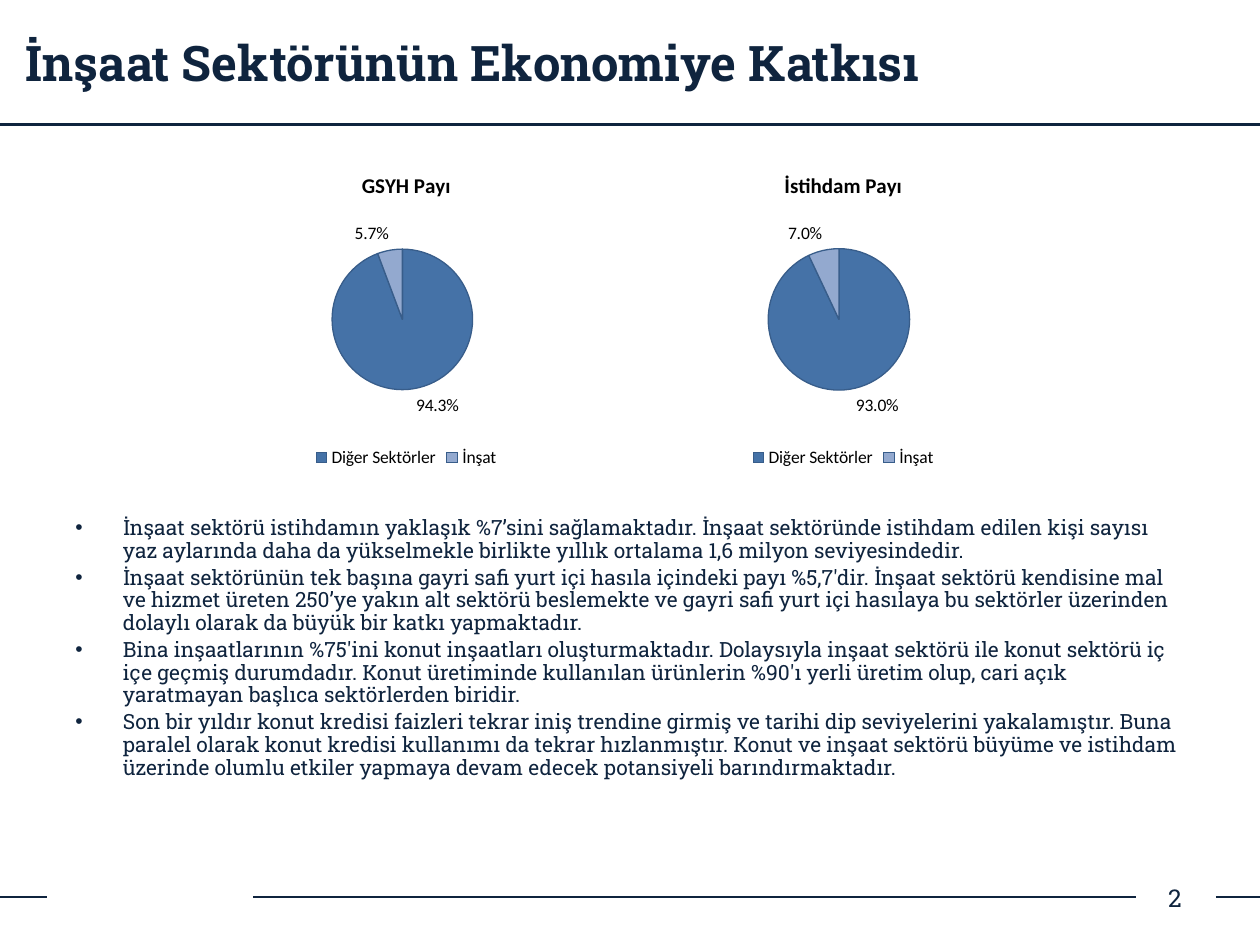
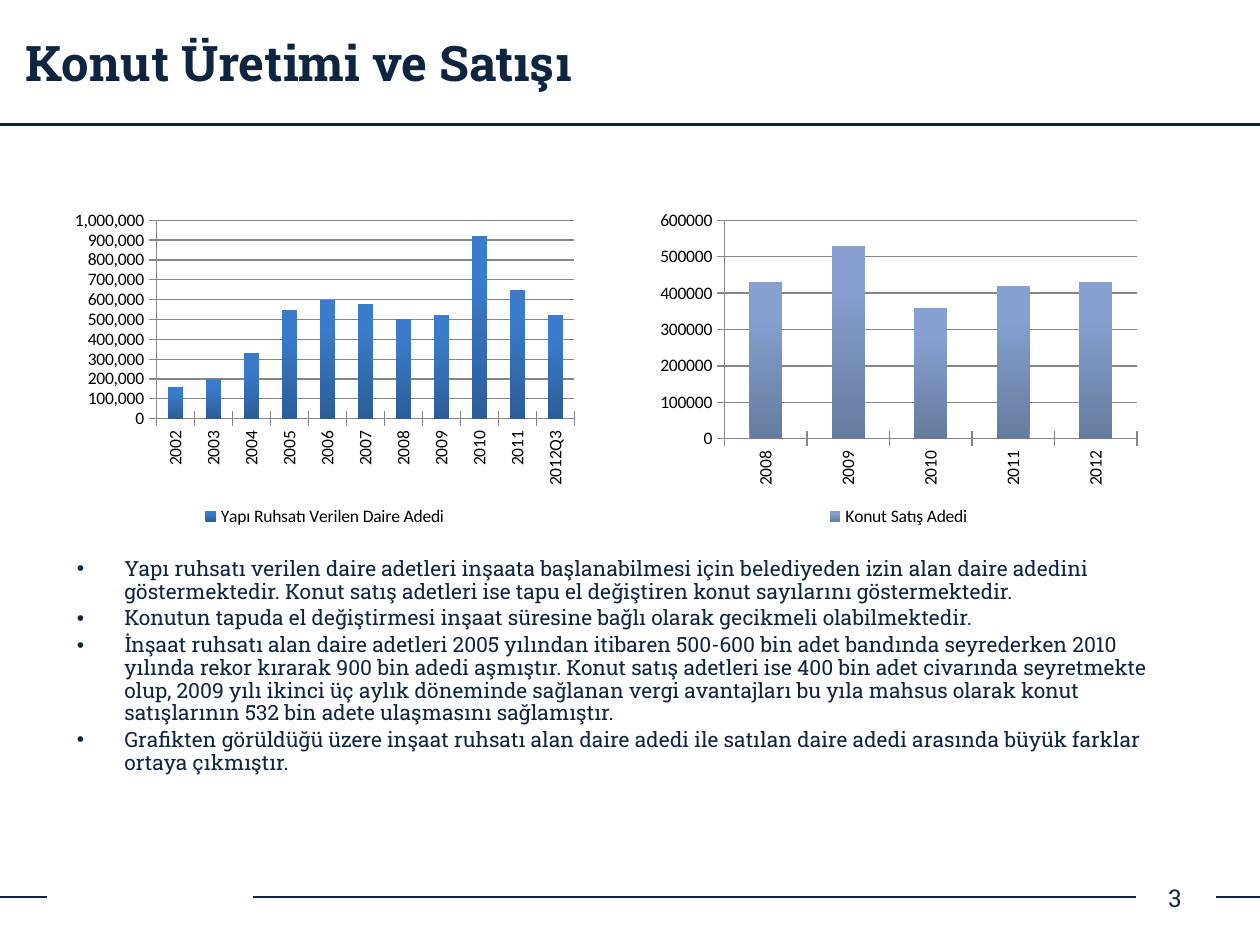
from lxml import etree
from pptx import Presentation
from pptx.chart.data import CategoryChartData
from pptx.dml.color import RGBColor
from pptx.enum.chart import XL_CHART_TYPE, XL_LABEL_POSITION, XL_LEGEND_POSITION, XL_TICK_MARK
from pptx.enum.shapes import MSO_CONNECTOR
from pptx.enum.text import MSO_ANCHOR, PP_ALIGN
from pptx.oxml.ns import qn
from pptx.util import Cm, Pt

PIE = XL_CHART_TYPE.PIE
COLUMN = XL_CHART_TYPE.COLUMN_CLUSTERED
OUTSIDE = XL_LABEL_POSITION.OUTSIDE_END
BOTTOM = XL_LEGEND_POSITION.BOTTOM
CROSS = XL_TICK_MARK.CROSS
STRAIGHT = MSO_CONNECTOR.STRAIGHT
TOP, MIDDLE = MSO_ANCHOR.TOP, MSO_ANCHOR.MIDDLE
LEFT, CENTER = PP_ALIGN.LEFT, PP_ALIGN.CENTER

COLORS = {
    "navy": "0F243E",
    "black": "000000",
    "axis": "868686",
    "pie_dark": "4572A7",
    "pie_light": "93A9CF",
    "pie_edge": "385D8A",
    "permit_top": "3A7CCB",
    "permit_base": "2C5D98",
    "sales_top": "86A1D1",
    "sales_base": "657C9F",
}
SLAB = "Roboto Slab"
CHART_FONT = "Calibri"
WIDTH, HEIGHT = 25.4, 19.05
TITLE_HEIGHT = 2.51
FOOTER_Y = 18.08
RULES = [
    (0, WIDTH, TITLE_HEIGHT, 2),
    (0, 0.94, FOOTER_Y, 1.5),
    (5.11, 22.91, FOOTER_Y, 1.5),
    (24.51, WIDTH, FOOTER_Y, 1.5),
]
INDENT = 0.96

SECTORS = ["Diğer Sektörler", "İnşat"]
SHARES = [("GSYH Payı", (0.943, 0.057)), ("İstihdam Payı", (0.93, 0.07))]
ECONOMY_POINTS = [
    "İnşaat sektörü istihdamın yaklaşık %7’sini sağlamaktadır. İnşaat sektöründe istihdam "
    "edilen kişi sayısı yaz aylarında daha da yükselmekle birlikte yıllık ortalama 1,6 milyon "
    "seviyesindedir.",
    "İnşaat sektörünün tek başına gayri safi yurt içi hasıla içindeki payı %5,7'dir. İnşaat "
    "sektörü kendisine mal ve hizmet üreten 250’ye yakın alt sektörü beslemekte ve gayri safi "
    "yurt içi hasılaya bu sektörler üzerinden dolaylı olarak da büyük bir katkı yapmaktadır.",
    "Bina inşaatlarının %75'ini konut inşaatları oluşturmaktadır. Dolaysıyla inşaat sektörü ile "
    "konut sektörü iç içe geçmiş durumdadır. Konut üretiminde kullanılan ürünlerin %90'ı yerli "
    "üretim olup, cari açık yaratmayan başlıca sektörlerden biridir.",
    "Son bir yıldır konut kredisi faizleri tekrar iniş trendine girmiş ve tarihi dip "
    "seviyelerini yakalamıştır. Buna paralel olarak konut kredisi kullanımı da tekrar "
    "hızlanmıştır. Konut ve inşaat sektörü büyüme ve istihdam üzerinde olumlu etkiler yapmaya "
    "devam edecek potansiyeli barındırmaktadır.",
]
PERMIT_YEARS = [str(year) for year in range(2002, 2012)] + ["2012Q3"]
PERMITS = [160000, 200000, 330000, 550000, 600000, 580000,
           500000, 520000, 920000, 650000, 520000]
SALES_YEARS = [str(year) for year in range(2008, 2013)]
SALES = [430000, 530000, 360000, 420000, 430000]
HOUSING_POINTS = [
    "Yapı ruhsatı verilen daire adetleri inşaata başlanabilmesi için belediyeden izin alan daire "
    "adedini göstermektedir. Konut satış adetleri ise tapu el değiştiren konut sayılarını "
    "göstermektedir.",
    "Konutun tapuda el değiştirmesi inşaat süresine bağlı olarak gecikmeli olabilmektedir.",
    "İnşaat ruhsatı alan daire adetleri 2005 yılından itibaren 500-600 bin adet bandında "
    "seyrederken 2010 yılında rekor kırarak 900 bin adedi aşmıştır. Konut satış adetleri ise "
    "400 bin adet civarında seyretmekte olup, 2009 yılı ikinci üç aylık döneminde sağlanan vergi "
    "avantajları bu yıla mahsus olarak konut satışlarının 532 bin adete ulaşmasını sağlamıştır.",
    "Grafikten görüldüğü üzere inşaat ruhsatı alan daire adedi ile satılan daire adedi arasında "
    "büyük farklar ortaya çıkmıştır.",
]


def rgb(name):
    return RGBColor.from_string(COLORS[name])


def write(para, text, *, size, font=SLAB, color="navy", bold=False, align=LEFT):
    para.alignment = align
    span = para.add_run()
    span.text = text
    span.font.size = Pt(size)
    span.font.name = font
    span.font.bold = bold
    span.font.color.rgb = rgb(color)


class Slides:
    def __init__(self):
        self.deck = Presentation()
        self.deck.slide_width = Cm(WIDTH)
        self.deck.slide_height = Cm(HEIGHT)
        self.page = None

    def start(self, title, number):
        self.page = self.deck.slides.add_slide(self.deck.slide_layouts[6])
        for rule in RULES:
            self.rule(*rule)
        frame = self.frame(0, 0, WIDTH, TITLE_HEIGHT, anchor=MIDDLE)
        frame.margin_left = Cm(0.51)
        write(frame.paragraphs[0], title, size=28, bold=True)
        frame = self.frame(23.09, 17.58, 1.19, 1.02, anchor=MIDDLE)
        write(frame.paragraphs[0], str(number), size=14, align=CENTER)

    def rule(self, start, end, y, weight):
        line = self.page.shapes.add_connector(STRAIGHT, Cm(start), Cm(y), Cm(end), Cm(y))
        line.line.color.rgb = rgb("navy")
        line.line.width = Pt(weight)
        etree.SubElement(line._element.spPr, qn("a:effectLst"))

    def frame(self, left, top, width, height, anchor=TOP):
        box = self.page.shapes.add_textbox(Cm(left), Cm(top), Cm(width), Cm(height))
        box.text_frame.word_wrap = True
        box.text_frame.vertical_anchor = anchor
        return box.text_frame

    def bullets(self, points, left, top, width, height):
        frame = self.frame(left, top, width, height)
        for index, point in enumerate(points):
            para = frame.add_paragraph() if index else frame.paragraphs[0]
            properties = para._p.get_or_add_pPr()
            properties.set("marL", str(Cm(INDENT)))
            properties.set("indent", str(-Cm(INDENT)))
            etree.SubElement(properties, qn("a:buFont"), typeface="Arial")
            etree.SubElement(properties, qn("a:buChar"), char="•")
            para.line_spacing = 0.9
            para.space_before = Pt(2.4 if index else 0)
            write(para, point, size=12)

    def chart(self, kind, name, categories, values, left, top, width, height):
        data = CategoryChartData()
        data.categories = categories
        data.add_series(name, values)
        chart = self.page.shapes.add_chart(
            kind, Cm(left), Cm(top), Cm(width), Cm(height), data).chart
        chart.font.name = CHART_FONT
        chart.font.size = Pt(10)
        chart.font.color.rgb = rgb("black")
        chart.has_legend = True
        chart.legend.position = BOTTOM
        chart.legend.include_in_layout = False
        chart.has_title = False
        return chart

    def pie(self, name, categories, values, *place):
        chart = self.chart(PIE, name, categories, values, *place)
        chart.has_title = True
        write(chart.chart_title.text_frame.paragraphs[0], name, size=12,
              font=CHART_FONT, color="black", bold=True, align=CENTER)
        plot = chart.plots[0]
        plot.vary_by_categories = True
        for index, color in enumerate(("pie_dark", "pie_light")):
            slice_format = plot.series[0].points[index].format
            slice_format.fill.solid()
            slice_format.fill.fore_color.rgb = rgb(color)
            slice_format.line.color.rgb = rgb("pie_edge")
            slice_format.line.width = Pt(0.75)
        plot.has_data_labels = True
        labels = plot.data_labels
        labels.show_value = True
        labels.show_percentage = False
        labels.number_format = "0.0%"
        labels.number_format_is_linked = False
        labels.position = OUTSIDE

    def columns(self, name, categories, values, *place, palette, number_format):
        chart = self.chart(COLUMN, name, categories, values, *place)
        plot = chart.plots[0]
        plot.vary_by_categories = False
        plot.gap_width = 150
        fill = plot.series[0].format.fill
        fill.gradient()
        fill.gradient_angle = 90
        for stop, part, position in zip(fill.gradient_stops, ("base", "top"), (0, 0.8)):
            stop.color.rgb = rgb(f"{palette}_{part}")
            stop.position = position
        value_axis = chart.value_axis
        value_axis.minimum_scale = 0
        value_axis.has_major_gridlines = True
        value_axis.tick_labels.number_format = number_format
        value_axis.tick_labels.number_format_is_linked = False
        for axis in (chart.category_axis, value_axis):
            axis.major_tick_mark = CROSS
            axis.tick_labels.font.size = Pt(10)
        for item in (chart.category_axis, value_axis, value_axis.major_gridlines):
            item.format.line.color.rgb = rgb("axis")
            item.format.line.width = Pt(0.75)
        body = chart.category_axis._element.find(qn("c:txPr")).find(qn("a:bodyPr"))
        body.set("rot", "-5400000")
        body.set("vert", "horz")


def main():
    slides = Slides()

    slides.start("İnşaat Sektörünün Ekonomiye Katkısı", 2)
    slides.bullets(ECONOMY_POINTS, 1.27, 10.31, 22.86, 6.68)
    for index, (name, shares) in enumerate(SHARES):
        slides.pie(name, SECTORS, shares, 4.09 + index * 8.81, 3.12, 8.2, 6.4)

    slides.start("Konut Üretimi ve Satışı", 3)
    slides.bullets(HOUSING_POINTS, 1.3, 11.13, 22.86, 6.2)
    slides.columns("Yapı Ruhsatı Verilen Daire Adedi", PERMIT_YEARS, PERMITS,
                   1.3, 4.11, 10.49, 6.6, palette="permit", number_format="#,##0")
    slides.columns("Konut Satış Adedi", SALES_YEARS, SALES,
                   13.11, 4.11, 10.01, 6.6, palette="sales", number_format="General")

    slides.deck.save("out.pptx")


if __name__ == "__main__":
    main()
